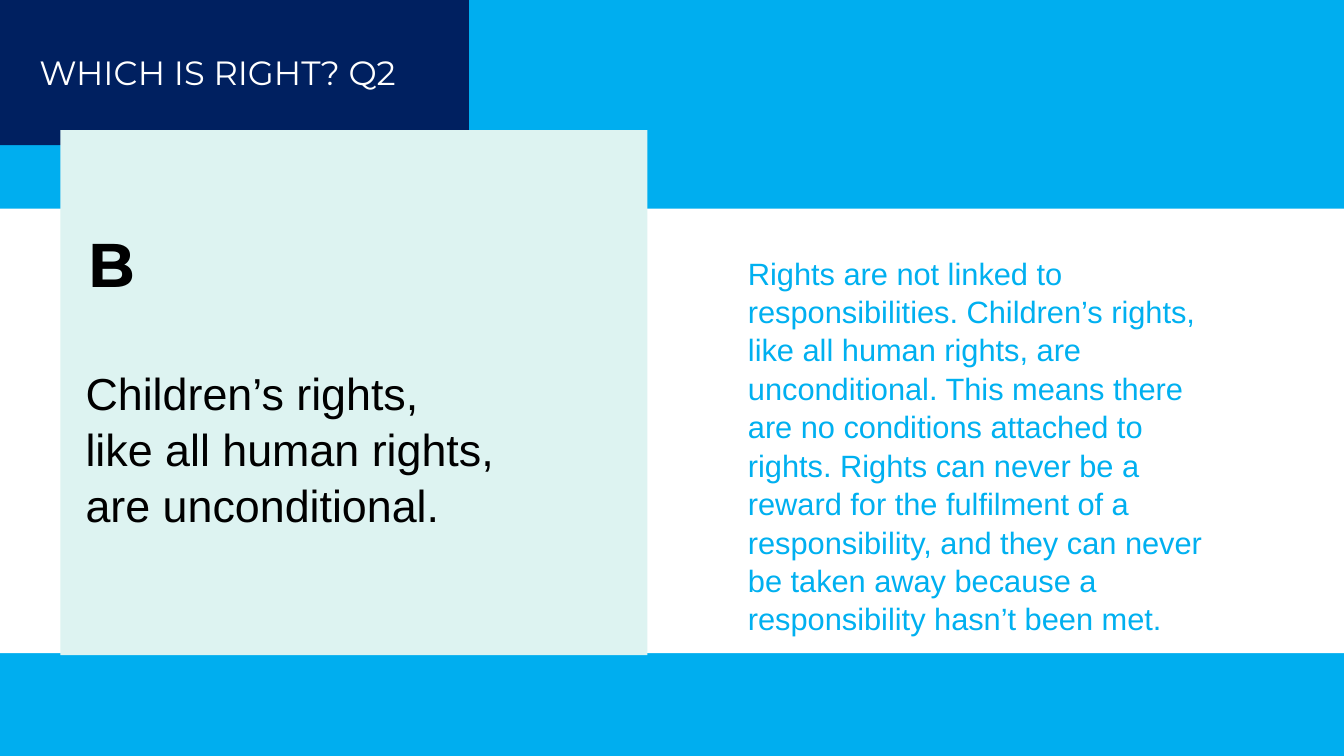
from dataclasses import dataclass

from pptx import Presentation
from pptx.dml.color import RGBColor
from pptx.enum.shapes import MSO_SHAPE
from pptx.enum.text import MSO_ANCHOR, MSO_AUTO_SIZE, PP_ALIGN
from pptx.util import Inches, Pt


@dataclass(frozen=True)
class Theme:
    sky: str = "00AEEF"
    navy: str = "002060"
    white: str = "FFFFFF"
    mint: str = "DDF3F1"
    black: str = "000000"
    blue: str = "00B0F0"
    head: str = "Montserrat"
    body: str = "Arial"
    title: int = 24
    mark: int = 44
    claim: int = 32
    note: int = 22
    lead: float = 1.04


T = Theme()
WIDE, HIGH = 13.33, 7.5


def block(slide, box, color):
    shape = slide.shapes.add_shape(MSO_SHAPE.RECTANGLE, *map(Inches, box))
    shape.shadow.inherit = False
    shape.fill.solid()
    shape.fill.fore_color.rgb = RGBColor.from_string(color)
    shape.line.fill.background()


def write(slide, box, text, size, color, font=T.body, bold=False,
          side=0.1, top=0.05, shape=None):
    """Set text in a new text box, or in the given shape."""
    area = [Inches(n) for n in box]
    if shape is None:
        shape = slide.shapes.add_textbox(*area)
    shape.left, shape.top, shape.width, shape.height = area
    frame = shape.text_frame
    frame.word_wrap = True
    frame.auto_size = MSO_AUTO_SIZE.NONE
    frame.vertical_anchor = MSO_ANCHOR.TOP
    frame.margin_left = frame.margin_right = Inches(side)
    frame.margin_top = frame.margin_bottom = Inches(top)
    para = frame.paragraphs[0]
    para.alignment = PP_ALIGN.LEFT
    para.line_spacing = T.lead
    for i, line in enumerate(text.split("\n")):
        if i:
            para.add_line_break()
        run = para.add_run()
        run.text = line
        run.font.name = font
        run.font.size = Pt(size)
        run.font.bold = bold
        run.font.color.rgb = RGBColor.from_string(color)


def header(slide, box, text):
    x, y, w, h = box
    block(slide, box, T.navy)
    title = slide.shapes.title
    # Bring the title in front of its panel
    slide.shapes._spTree.append(title._element)
    write(slide, (x + 0.29, y + 0.45, w - 0.52, 0.5), text,
          T.title, T.white, font=T.head, shape=title)


def card(slide, box, mark, claim):
    x, y, w, h = box
    block(slide, box, T.mint)
    write(slide, (x + 0.15, y + 0.8, 0.74, 0.98), mark, T.mark, T.black,
          font=T.head, bold=True, side=0.12, top=0.12)
    write(slide, (x + 0.15, y + 2.27, w - 0.85, 1.72), claim,
          T.claim, T.black)


def answer(slide, box, text):
    x, y, w, h = box
    write(slide, (x + 7.32, y + 0.39, 4.73, h - 0.24), text, T.note, T.blue)


def main():
    deck = Presentation()
    deck.slide_width, deck.slide_height = Inches(WIDE), Inches(HIGH)
    slide = deck.slides.add_slide(deck.slide_layouts[5])
    slide.background.fill.solid()
    slide.background.fill.fore_color.rgb = RGBColor.from_string(T.sky)

    # White band behind the card and the answer
    band = (0, 2.07, WIDE, 4.41)
    block(slide, band, T.white)

    # Title panel
    header(slide, (0, 0, 4.65, 1.44), "WHICH IS RIGHT? Q2")

    # Statement card
    card(slide, (0.6, 1.29, 5.82, 5.21), "B",
         "Children’s rights, \nlike all human rights, \nare unconditional.")

    # Explanation
    answer(slide, band,
           "Rights are not linked to responsibilities. Children’s rights, "
           "like all human rights, are unconditional. This means there are "
           "no conditions attached to rights. Rights can never be a reward "
           "for the fulfilment of a responsibility, and they can never be "
           "taken away because a responsibility hasn’t been met.")

    deck.save("out.pptx")


if __name__ == "__main__":
    main()
